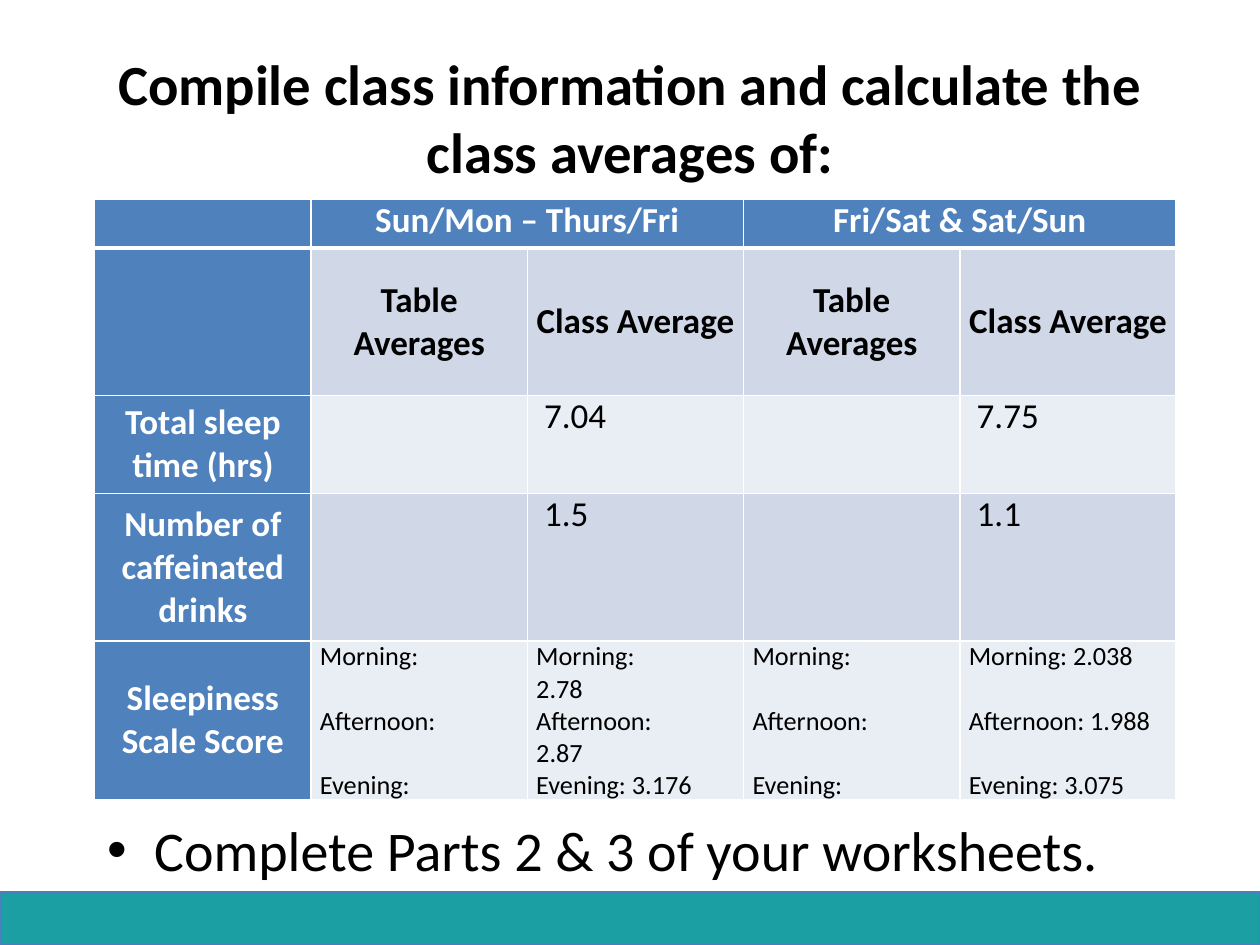
from lxml.etree import SubElement
from pptx import Presentation
from pptx.dml.color import RGBColor
from pptx.enum.shapes import MSO_SHAPE
from pptx.enum.text import MSO_ANCHOR, MSO_AUTO_SIZE, PP_ALIGN
from pptx.oxml.ns import qn
from pptx.util import Cm, Pt

BLUE, WHITE, BLACK = "4F81BD", "FFFFFF", "000000"
BANDS = ["D0D8E8", "E9EDF4"]


def paint(part, color):
    part.solid()
    part.fore_color.rgb = RGBColor.from_string(color)


def write(para, text, size, color=BLACK, bold=False):
    run = para.add_run()
    run.text = text
    font = run.font
    font.name, font.size, font.bold = "Calibri", Pt(size), bold
    paint(font.fill, color)


prs = Presentation()
prs.slide_width, prs.slide_height = Cm(25.4), Cm(19.05)
slide = prs.slides.add_slide(prs.slide_layouts[5])

# Title
title = slide.shapes.title
title.left, title.top, title.width, title.height = Cm(1.27), Cm(0.76), Cm(22.86), Cm(3.18)
frame = title.text_frame
frame.auto_size = MSO_AUTO_SIZE.NONE
frame.vertical_anchor = MSO_ANCHOR.MIDDLE
frame.paragraphs[0].alignment = PP_ALIGN.CENTER
write(frame.paragraphs[0], "Compile class information and calculate the class averages of:", 32.4, bold=True)

# Bottom band
band = slide.shapes.add_shape(MSO_SHAPE.RECTANGLE, 0, Cm(17.98), Cm(25.4), Cm(1.07))
band.shadow.inherit = False
paint(band.fill, "1C9FA3")
paint(band.line.fill, "4B7EBC")
band.line.width = Pt(0.75)

# Bullet line
box = slide.shapes.add_textbox(Cm(1.91), Cm(16.31), Cm(22.86), Cm(1.91))
box.text_frame.word_wrap = True
para = box.text_frame.paragraphs[0]
props = para._p.get_or_add_pPr()
props.set("marL", str(Cm(0.95)))
props.set("indent", str(Cm(-0.95)))
SubElement(props, qn("a:buFont"), typeface="Arial")
SubElement(props, qn("a:buChar"), char="•")
write(para, "Complete Parts 2 & 3 of your worksheets.", 32)

# Table content
blank = ["Morning:", "Afternoon:", "Evening:"]
week = ["Morning:", "2.78", "Afternoon:", "2.87", "Evening: 3.176"]
rest = ["Morning: 2.038", "Afternoon: 1.988", "Evening: 3.075"]
rows = [
    ["", "Sun/Mon – Thurs/Fri", "", "Fri/Sat & Sat/Sun", ""],
    ["", "Table Averages", "Class Average", "Table Averages", "Class Average"],
    ["Total sleep time (hrs)", "", " 7.04", "", " 7.75"],
    ["Number of caffeinated drinks", "", " 1.5", "", " 1.1"],
    ["Sleepiness Scale Score", blank, week, blank, rest],
]
tall = [0.99, 2.97, 1.98, 2.97, 2.97]
grid = slide.shapes.add_table(5, 5, Cm(1.91), Cm(4.01), Cm(21.8), Cm(sum(tall))).table
for col in grid.columns:
    col.width = Cm(4.36)
for row, size in zip(grid.rows, tall):
    row.height = Cm(size)
for left in (1, 3):
    grid.cell(0, left).merge(grid.cell(0, left + 1))

# Table cells
for r, row in enumerate(rows):
    for c, item in enumerate(row):
        cell = grid.cell(r, c)
        cell.margin_left = cell.margin_right = Cm(0.18)
        cell.margin_top = cell.margin_bottom = 0
        head = r == 0 or c == 0
        label = head or r == 1
        if r and label:
            cell.vertical_anchor = MSO_ANCHOR.MIDDLE
        lines = item if isinstance(item, list) else [item]
        for n, text in enumerate(lines):
            frame = cell.text_frame
            para = frame.add_paragraph() if n else frame.paragraphs[0]
            if label:
                para.alignment = PP_ALIGN.CENTER
            if n and len(lines) == 3:
                para.space_before = Pt(18.3)
            if text:
                write(para, text, 15 if len(lines) > 1 else 20, WHITE if head else BLACK, label)

        # Borders come before the fill in the cell's XML
        tail = cell._tc.get_or_add_tcPr()
        for side in "LRTB":
            thick = 3 if (r, side) in ((0, "B"), (1, "T")) else 1
            edge = SubElement(tail, qn("a:ln" + side), w=str(Pt(thick)))
            fill = SubElement(edge, qn("a:solidFill"))
            SubElement(fill, qn("a:srgbClr"), val=WHITE)
        paint(cell.fill, BLUE if head else BANDS[(r - 1) % 2])

prs.save("out.pptx")
